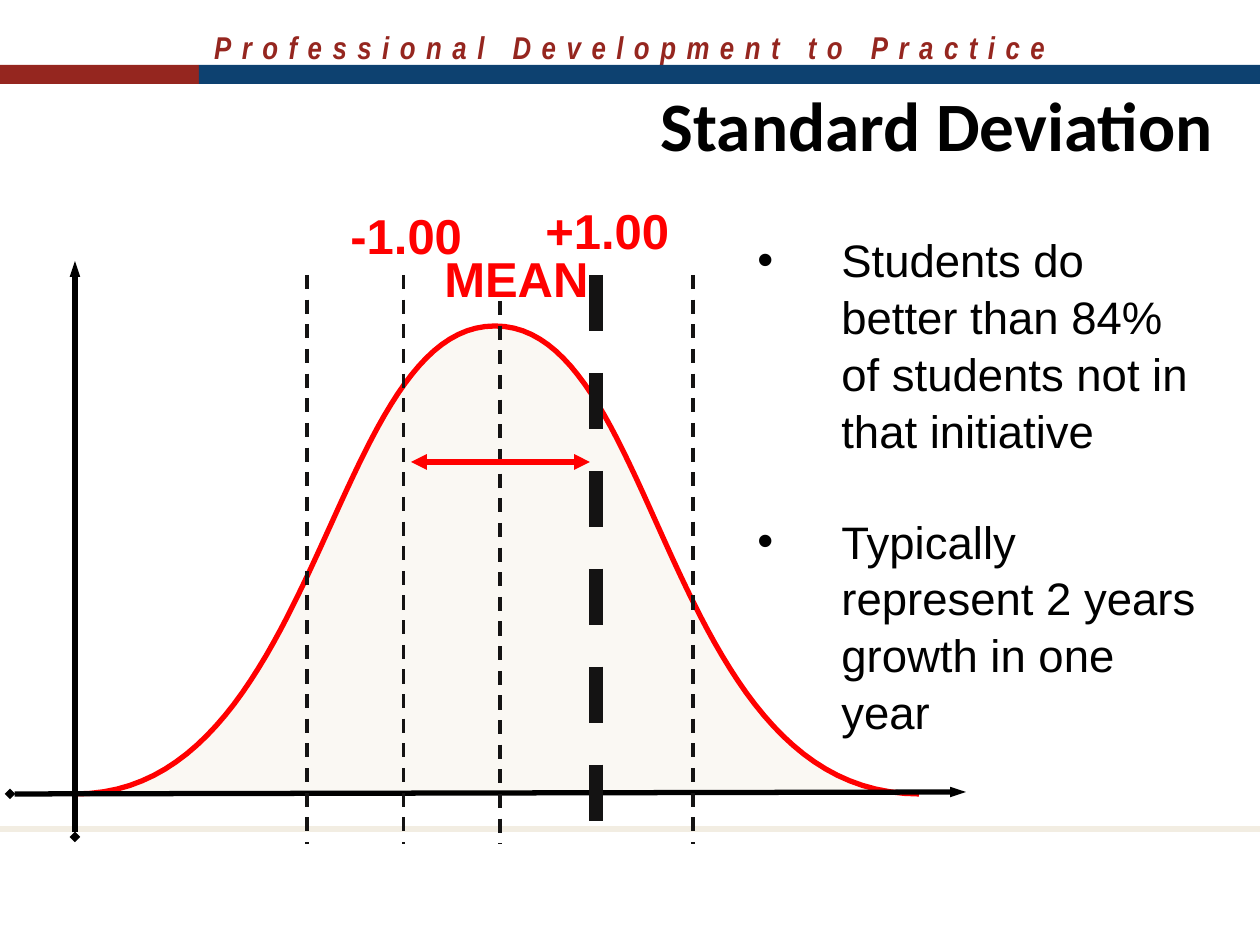
import pptx
import pptx.util
import pptx.dml.color
import pptx.enum.dml
import pptx.enum.shapes
import pptx.enum.text
import pptx.oxml.ns
from lxml import etree

RGB = pptx.dml.color.RGBColor
PP = pptx.enum.text.PP_ALIGN
PX = 914400 // 126
MAROON = RGB(0x95, 0x26, 0x1F)
NAVY = RGB(0x0D, 0x41, 0x70)
SAND = RGB(0xF2, 0xED, 0xE2)
IVORY = RGB(0xFA, 0xF8, 0xF3)
RED = RGB(0xFF, 0, 0)
BLACK = RGB(0, 0, 0)
CHARCOAL = RGB(0x14, 0x13, 0x13)

LABEL = {"name": "Arial", "size": 28, "bold": True, "color": RED}
BODY = {"name": "Arial", "size": 26, "color": BLACK}
BULLETS = (
    "Students do better than 84% of students not in that initiative",
    "Typically represent 2 years growth in one year",
)


def px(*values):
    return [round(v * PX) for v in values]


def sub(parent, tag, **attrs):
    return etree.SubElement(parent, pptx.oxml.ns.qn(tag), attrs)


def set_font(font, fmt):
    for key, value in fmt.items():
        if key == "color":
            font.color.rgb = value
        else:
            setattr(font, key, pptx.util.Pt(value) if key == "size" else value)


def add_text(s, box, text, fmt, align=PP.LEFT, spacing=None):
    tf = s.shapes.add_textbox(*px(*box)).text_frame
    tf.word_wrap = True
    p = tf.paragraphs[0]
    p.alignment = align
    r = p.add_run()
    r.text = text
    set_font(r.font, fmt)
    if spacing:
        r.font._element.set("spc", str(spacing * 100))
    return tf


def add_bullets(s, box, items):
    tf = s.shapes.add_textbox(*px(*box)).text_frame
    tf.word_wrap = True
    for i, item in enumerate(items):
        p = tf.add_paragraph() if i else tf.paragraphs[0]
        pPr = p._p.get_or_add_pPr()
        indent = px(84)[0]
        pPr.set("marL", str(indent))
        pPr.set("indent", str(-indent))
        sub(pPr, "a:buFont", typeface="Arial")
        sub(pPr, "a:buChar", char="•")
        p.line_spacing = 1.04
        if i:
            p.space_before = pptx.util.Pt(31)
        r = p.add_run()
        r.text = item
        set_font(r.font, BODY)


def add_bar(s, box, color):
    sp = s.shapes.add_shape(pptx.enum.shapes.MSO_SHAPE.RECTANGLE, *px(*box))
    sp.shadow.inherit = False
    sp.fill.solid()
    sp.fill.fore_color.rgb = color
    sp.line.fill.background()


def add_line(s, ends, color, width, dash=False, head=None, tail=None):
    straight = pptx.enum.shapes.MSO_CONNECTOR.STRAIGHT
    c = s.shapes.add_connector(straight, *px(*ends))
    c.line.color.rgb = color
    c.line.width = pptx.util.Pt(width)
    if dash:
        c.line.dash_style = pptx.enum.dml.MSO_LINE.DASH
    ln = c.line._get_or_add_ln()
    for tag, end in (("a:headEnd", head), ("a:tailEnd", tail)):
        if end:
            kind, w, length = end
            sub(ln, tag, type=kind, w=w, len=length)
    sub(c._element.spPr, "a:effectLst")


def bezier(points, steps=50):
    for i in range(1, steps + 1):
        t = i / steps
        weights = ((1 - t) ** 3, 3 * t * (1 - t) ** 2, 3 * t * t * (1 - t), t ** 3)
        yield tuple(sum(w * q[axis] for w, q in zip(weights, points)) for axis in (0, 1))


def add_bell(s):
    start, peak, end = (76, 794), (495, 326), (919, 794)
    rise = (start, (318, 794), (331, 326), peak)
    fall = (peak, (659, 326), (665, 794), end)
    points = [px(*q) for half in (rise, fall) for q in bezier(half)]
    builder = s.shapes.build_freeform(*px(*start), scale=1.0)
    builder.add_line_segments(points, close=False)
    sp = builder.convert_to_shape()
    sp.shadow.inherit = False
    sp.fill.solid()
    sp.fill.fore_color.rgb = IVORY
    sp.line.color.rgb = RED
    sp.line.width = pptx.util.Pt(3)


def add_graph(s):
    add_bell(s)
    diamond = ("diamond", "sm", "sm")
    arrow = ("triangle", "sm", "med")
    for axis in ((10, 794, 966, 792), (75, 837, 75, 261)):
        add_line(s, axis, BLACK, 3, head=diamond, tail=arrow)
    for deviation in range(-2, 3):
        x = 500 + 96.5 * deviation
        top = 275 if deviation else 301
        add_line(s, (x, top, x, 844), CHARCOAL, 8 if deviation == 1 else 2, dash=True)
    point = ("triangle", "med", "med")
    add_line(s, (411, 462, 590, 462), RED, 3, head=point, tail=point)


def main():
    prs = pptx.Presentation()
    prs.slide_width, prs.slide_height = px(1260, 945)
    s = prs.slides.add_slide(prs.slide_layouts[6])
    tagline = {"name": "Arial Narrow", "size": 18, "bold": True, "italic": True, "color": MAROON}
    add_text(s, (0, 22, 1260, 50), "Professional Development to Practice", tagline, PP.CENTER, 6)
    add_bar(s, (0, 65, 199, 19), MAROON)
    add_bar(s, (199, 65, 1061, 19), NAVY)
    add_line(s, (0, 829, 1260, 829), SAND, 3)
    heading = {"name": "Calibri", "size": 39.6, "bold": True, "color": BLACK}
    tf = add_text(s, (618, 76, 638, 96), "Standard Deviation", heading, PP.CENTER)
    tf.vertical_anchor = pptx.enum.text.MSO_ANCHOR.MIDDLE
    add_graph(s)
    for box, text in (
        ((533, 194, 166, 72), "+1.00"),
        ((338, 199, 147, 72), "-1.00"),
        ((432, 242, 184, 72), "MEAN"),
    ):
        add_text(s, box, text, LABEL)
    add_bullets(s, (745, 224, 472, 630), BULLETS)
    prs.save("out.pptx")


if __name__ == "__main__":
    main()
